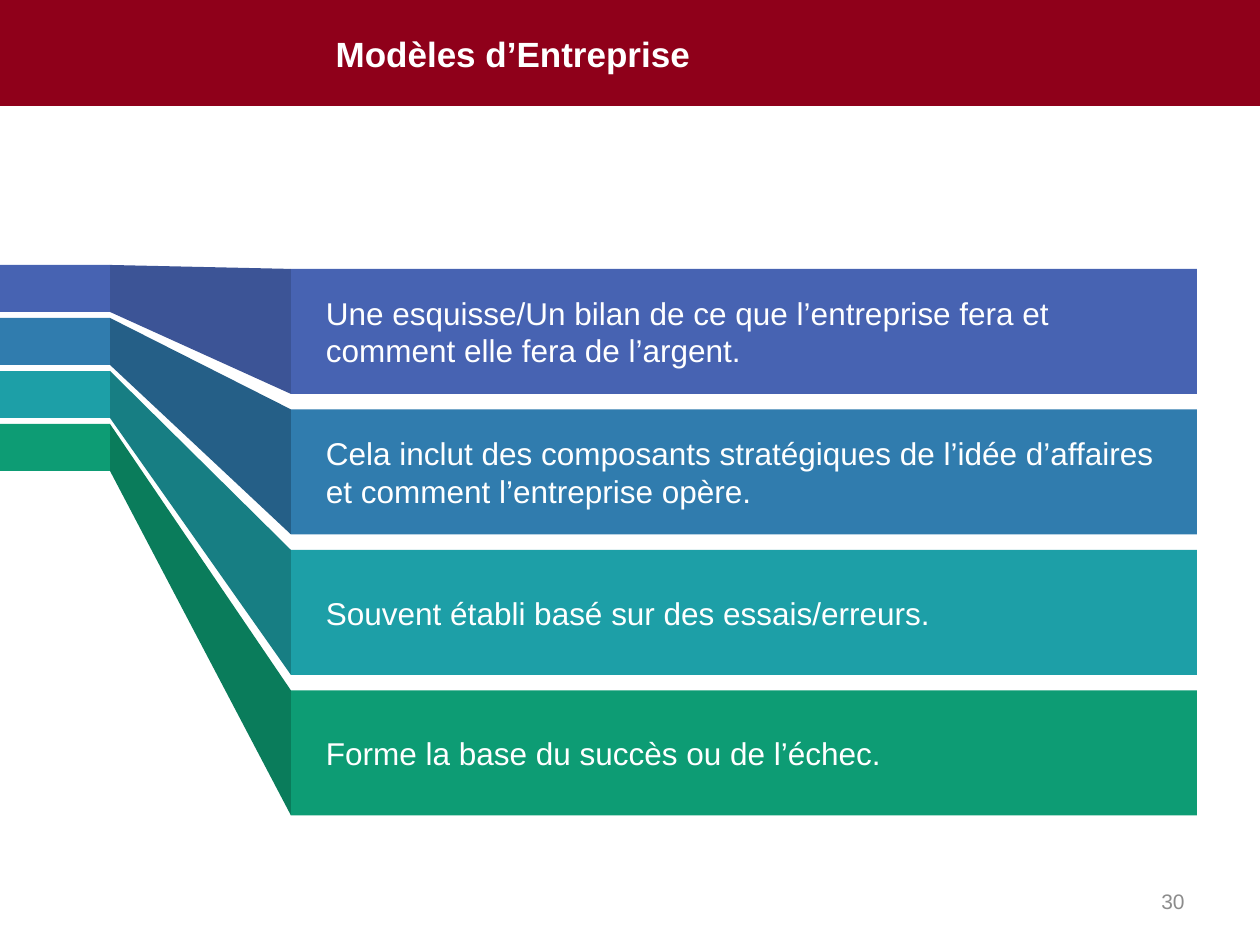
"""Build the business models slide with four folded ribbons."""
from pptx import Presentation
from pptx.dml.color import RGBColor
from pptx.enum.shapes import MSO_SHAPE
from pptx.enum.text import MSO_ANCHOR, PP_ALIGN

TITLE = "Modèles d’Entreprise"
NUMBER = "30"
RIBBONS = [
    ("Une esquisse/Un bilan de ce que l’entreprise fera et comment elle fera de l’argent.",
     "4763B2", "3C5496"),
    ("Cela inclut des composants stratégiques de l’idée d’affaires et comment l’entreprise opère.",
     "307CAE", "255F87"),
    ("Souvent établi basé sur des essais/erreurs.", "1D9FA7", "177E83"),
    ("Forme la base du succès ou de l’échec.", "0D9C74", "0A7C5B"),
]
THEME = {"font": "Arial", "banner": "8F001A", "light": "FFFFFF", "muted": "8C8C8C",
         "title": 20, "body": 18, "small": 12}

PX = 914400 / 126
SLIDE_W, SLIDE_H, BANNER_H = 1260, 945, 106
TAB_W, TAB_TOP, TAB_H, TAB_PITCH = 110, 265, 47, 53
BAR_X, BAR_W, BAR_TOP, BAR_H, BAR_GAP = 291, 906, 269, 125, 15.5


def px(*values):
    return [round(v * PX) for v in values]


def paint(s, color):
    s.shadow.inherit = False
    s.fill.solid()
    s.fill.fore_color.rgb = RGBColor.from_string(color)
    s.line.fill.background()
    return s


def rect(shapes, box, color):
    return paint(shapes.add_shape(MSO_SHAPE.RECTANGLE, *px(*box)), color)


def write(s, text, size, color, align=PP_ALIGN.LEFT, bold=False):
    tf = s.text_frame
    tf.text = text
    tf.word_wrap = True
    tf.vertical_anchor = MSO_ANCHOR.MIDDLE
    p = tf.paragraphs[0]
    p.alignment = align
    font = p.runs[0].font
    font.name, font.bold = THEME["font"], bold
    font.size = round(THEME[size] * 12700)
    font.color.rgb = RGBColor.from_string(THEME[color])


def add_ribbon(s, i, text, face, fold):
    tab_y = TAB_TOP + i * TAB_PITCH
    bar_y = BAR_TOP + i * (BAR_H + BAR_GAP)
    shapes = s.shapes.add_group_shape().shapes
    bar = rect(shapes, (BAR_X, bar_y, BAR_W, BAR_H), face)
    bar.text_frame.margin_left = px(35)[0]
    write(bar, text, "body", "light")
    corners = [px(*point) for point in (
        (TAB_W, tab_y + TAB_H), (BAR_X, bar_y + BAR_H), (BAR_X, bar_y), (TAB_W, tab_y))]
    builder = shapes.build_freeform(*corners[0])
    builder.add_line_segments(corners[1:], close=True)
    paint(builder.convert_to_shape(), fold)
    rect(shapes, (0, tab_y, TAB_W, TAB_H), face)


def main():
    prs = Presentation()
    prs.slide_width, prs.slide_height = px(SLIDE_W, SLIDE_H)
    s = prs.slides.add_slide(prs.slide_layouts[5])
    banner = rect(s.shapes, (0, 0, SLIDE_W, BANNER_H), THEME["banner"])
    title = s.shapes.title
    title.left, title.top, title.width, title.height = px(323, 0, 937, BANNER_H)
    write(title, TITLE, "title", "light", bold=True)
    title.element.addprevious(banner.element)
    for i, ribbon in enumerate(RIBBONS):
        add_ribbon(s, i, *ribbon)
    number = s.shapes.add_textbox(*px(903, 876, 294, 50))
    write(number, NUMBER, "small", "muted", PP_ALIGN.RIGHT)
    prs.save("out.pptx")


if __name__ == "__main__":
    main()
